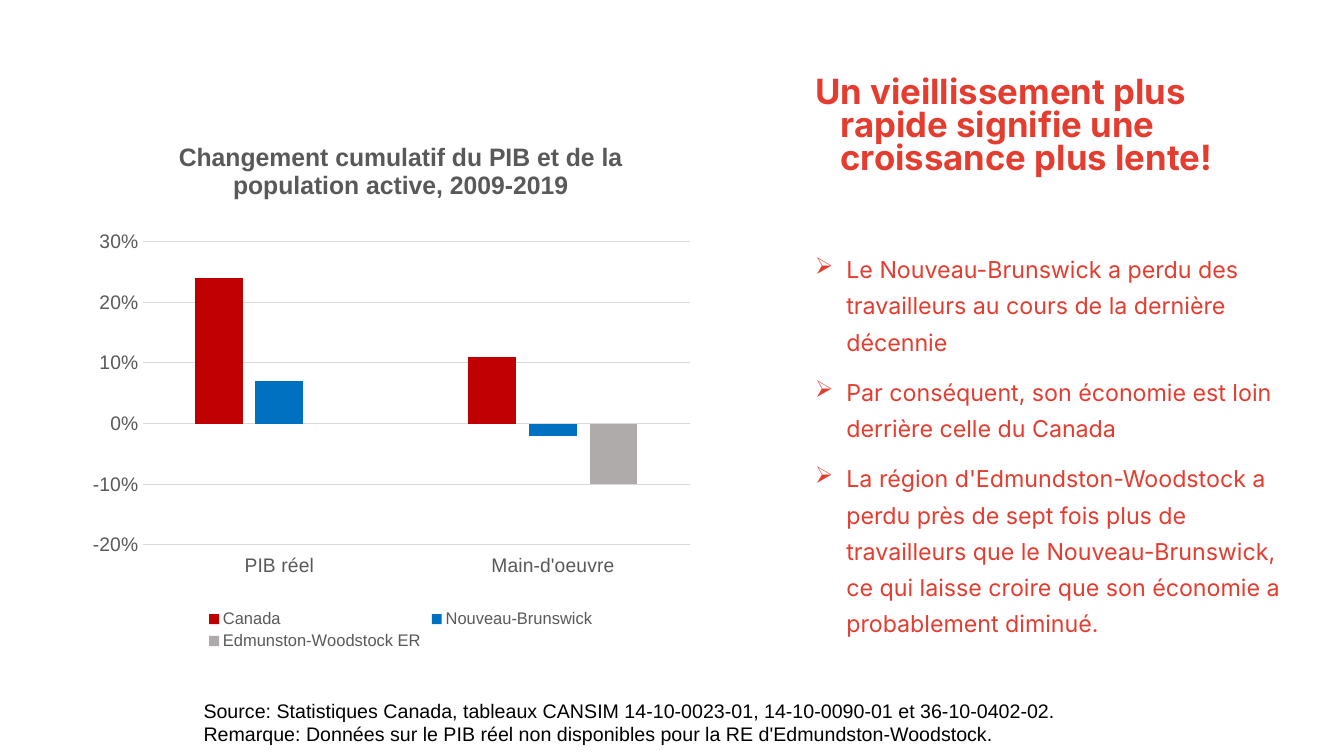
import pptx
import pptx.util
import pptx.dml.color
import pptx.chart.data
import pptx.enum.chart
import pptx.enum.text
import pptx.oxml
import pptx.oxml.ns
from lxml import etree

Cm, Pt = pptx.util.Cm, pptx.util.Pt
COLORS = {"red": "E43D30", "black": "000000", "grey": "595959", "grid": "D9D9D9",
          "canada": "C00000", "nb": "0070C0", "edmundston": "AFABAB"}
HEADING = {"size": 24.8, "name": "Inter", "bold": True, "color": "red"}
POINT = {"size": 16.6, "name": "Inter", "color": "red"}
SOURCE = {"size": 14, "name": "Arial", "color": "black"}
CHART_TITLE = {"size": 18, "name": "Arial", "bold": True, "color": "grey"}
AXIS = {"size": 14, "name": "Arial", "bold": False, "color": "grey"}
LEGEND = {"size": 12, "name": "Arial", "color": "grey"}


def rgb(key):
    return pptx.dml.color.RGBColor.from_string(COLORS[key])


def set_font(font, fmt):
    for key, value in fmt.items():
        if key == "color":
            font.color.rgb = rgb(value)
        else:
            setattr(font, key, Pt(value) if key == "size" else value)


def set_line(line, key):
    line.color.rgb = rgb(key)
    line.width = Pt(0.75)


def add_bullet(pPr, char, color):
    for tag, attr, value in (("a:buClr", None, None), ("a:buChar", "char", char)):
        el = etree.SubElement(pPr, pptx.oxml.ns.qn(tag))
        if attr:
            el.set(attr, value)
        else:
            clr = etree.SubElement(el, pptx.oxml.ns.qn("a:srgbClr"))
            clr.set("val", COLORS[color])


def add_text(s, box, lines, fmt, spacing=None, before=0, indent=None, bullet=None):
    tf = s.shapes.add_textbox(*map(Cm, box)).text_frame
    tf.word_wrap = True
    tf.vertical_anchor = pptx.enum.text.MSO_ANCHOR.TOP
    for i, line in enumerate(lines):
        p = tf.paragraphs[0] if i == 0 else tf.add_paragraph()
        pPr = p._p.get_or_add_pPr()
        if indent:
            left, hang = indent
            pPr.set("marL", str(Cm(left)))
            pPr.set("indent", str(-Cm(hang)))
        if bullet:
            add_bullet(pPr, bullet, fmt["color"])
        if spacing:
            p.line_spacing = spacing
        if i and before:
            p.space_before = Pt(before)
        r = p.add_run()
        r.text = line
        set_font(r.font, fmt)


def set_plot_layout(chart, x, y, w, h):
    """Fix the inner plot area as fractions of the chart."""
    plot_area = chart._chartSpace.chart.plotArea
    for old in plot_area.findall(pptx.oxml.ns.qn("c:layout")):
        plot_area.remove(old)
    parts = [("layoutTarget", "inner"), ("xMode", "edge"), ("yMode", "edge"),
             ("x", x), ("y", y), ("w", w), ("h", h)]
    body = "".join(f'<c:{tag} val="{value}"/>' for tag, value in parts)
    plot_area.insert(0, pptx.oxml.parse_xml(
        f'<c:layout {pptx.oxml.ns.nsdecls("c")}><c:manualLayout>{body}'
        '</c:manualLayout></c:layout>'))


def add_growth_chart(s, box):
    data = pptx.chart.data.CategoryChartData(number_format="0%")
    data.categories = ["PIB réel", "Main-d'oeuvre"]
    series = [("Canada", (0.24, 0.11), "canada"),
              ("Nouveau-Brunswick", (0.07, -0.02), "nb"),
              ("Edmunston-Woodstock ER", (None, -0.1), "edmundston")]
    for name, values, _ in series:
        data.add_series(name, values)
    chart = s.shapes.add_chart(pptx.enum.chart.XL_CHART_TYPE.COLUMN_CLUSTERED,
                               *map(Cm, box), data).chart
    set_font(chart.font, {"size": 10, "name": "Arial", "color": "black"})

    # Title and legend
    chart.has_title = True
    p = chart.chart_title.text_frame.paragraphs[0]
    r = p.add_run()
    r.text = "Changement cumulatif du PIB et de la population active, 2009-2019"
    set_font(r.font, CHART_TITLE)
    chart.chart_title.include_in_layout = False
    chart.has_legend = True
    chart.legend.position = pptx.enum.chart.XL_LEGEND_POSITION.BOTTOM
    chart.legend.include_in_layout = False
    set_font(chart.legend.font, LEGEND)

    # Columns
    plot = chart.plots[0]
    plot.gap_width, plot.overlap, plot.vary_by_categories = 219, -27, False
    for ser, (_, _, color) in zip(plot.series, series):
        ser.invert_if_negative = False
        ser.format.fill.solid()
        ser.format.fill.fore_color.rgb = rgb(color)

    # Axes
    cat, val = chart.category_axis, chart.value_axis
    for axis in (cat, val):
        axis.major_tick_mark = axis.minor_tick_mark = pptx.enum.chart.XL_TICK_MARK.NONE
        set_font(axis.tick_labels.font, AXIS)
    cat.tick_label_position = pptx.enum.chart.XL_TICK_LABEL_POSITION.LOW
    set_line(cat.format.line, "grid")
    val.minimum_scale, val.maximum_scale, val.major_unit = -0.2, 0.3, 0.1
    val.tick_labels.number_format = "0%"
    val.tick_labels.number_format_is_linked = False
    val.format.line.fill.background()
    val.has_major_gridlines = True
    set_line(val.major_gridlines.format.line, "grid")
    set_plot_layout(chart, 0.065, 0.228, 0.922, 0.568)


def add_message(s, box):
    x, y, w, h = box
    # Heading
    add_text(s, (x, y, w, 3.3),
             ["Un vieillissement plus rapide signifie une croissance plus lente!"],
             HEADING, spacing=0.8, indent=(1.27, 0.64))
    # Key points
    add_text(s, (x, y + 4.27, w, h - 4.27),
             ["Le Nouveau-Brunswick a perdu des travailleurs au cours de la dernière décennie",
              "Par conséquent, son économie est loin derrière celle du Canada",
              "La région d'Edmundston-Woodstock a perdu près de sept fois plus de travailleurs "
              "que le Nouveau-Brunswick, ce qui laisse croire que son économie a probablement "
              "diminué."],
             POINT, spacing=1.3, before=10, indent=(1.42, 0.79), bullet="➢")


def add_source(s, box):
    add_text(s, box,
             ["Source: Statistiques Canada, tableaux CANSIM 14-10-0023-01, 14-10-0090-01 "
              "et 36-10-0402-02.",
              "Remarque: Données sur le PIB réel non disponibles pour la RE "
              "d'Edmundston-Woodstock."],
             SOURCE)


def main():
    prs = pptx.Presentation()
    prs.slide_width, prs.slide_height = Cm(33.87), Cm(19.05)
    s = prs.slides.add_slide(prs.slide_layouts[6])
    add_message(s, (19.66, 1.83, 12.93, 15.27))
    add_growth_chart(s, (2.34, 3.02, 15.24, 13.46))
    add_source(s, (4.88, 17.48, 23.77, 1.45))
    prs.save("out.pptx")


if __name__ == "__main__":
    main()
